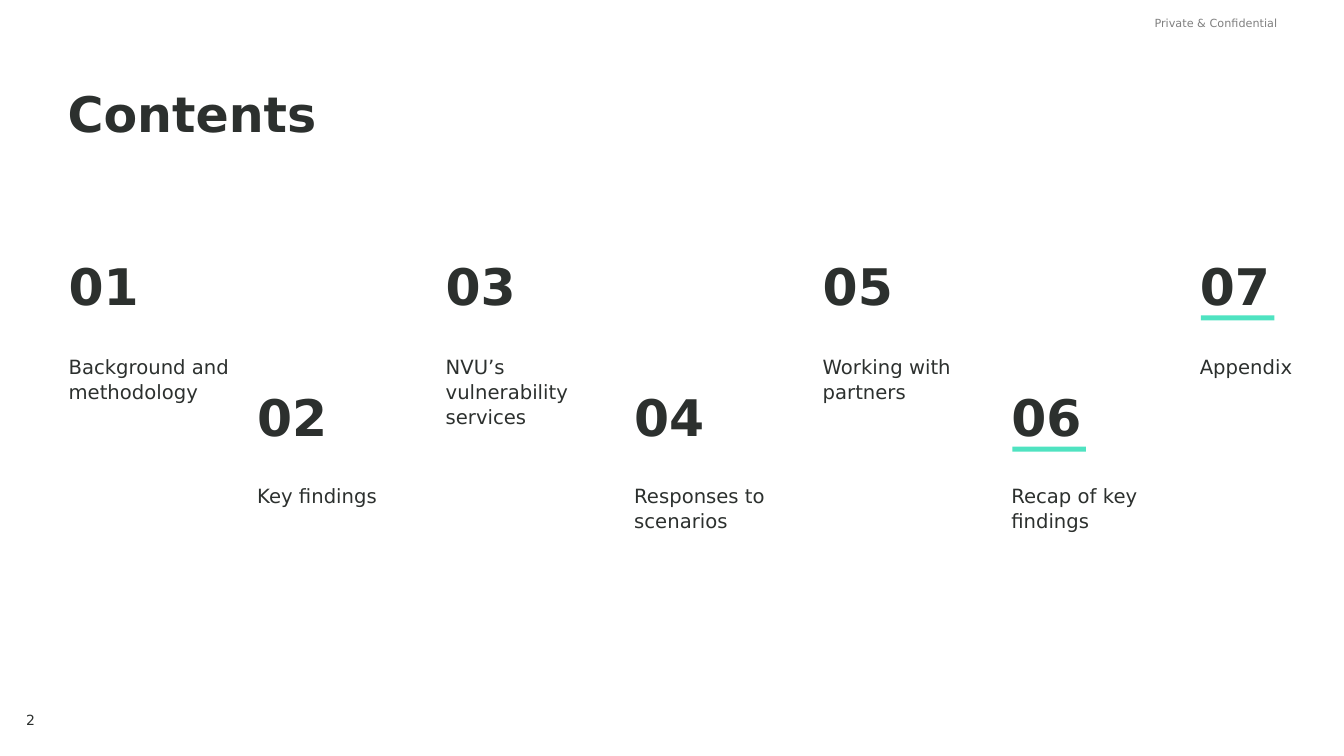
from pptx import Presentation
from pptx import util as u
from pptx.dml.color import RGBColor
from pptx.enum import shapes, text

INK = RGBColor(0x2C, 0x30, 0x2E)
GREY = RGBColor(0x80, 0x80, 0x80)
MINT = RGBColor(0x4F, 0xE3, 0xC1)
FONT = "DejaVu Sans"
WIDE, HIGH = 13.33, 7.5
LEFT, PITCH, COL = 0.68, 1.87, 1.61
FOOT = 6.62
ROWS = [(2.27, 3.5), (3.57, 4.78)]
TOPICS = [
    "Background and methodology",
    "Key findings",
    "NVU’s vulnerability services",
    "Responses to scenarios",
    "Working with partners",
    "Recap of key findings",
    "Appendix",
]
MARKED = {6, 7}


def add_text(slide, box, words, size, color=INK, bold=False, low=False,
             right=False, line=None):
    frame = slide.shapes.add_textbox(*map(u.Inches, box)).text_frame
    frame.word_wrap = True
    frame.margin_left = frame.margin_right = 0
    frame.margin_top = frame.margin_bottom = 0
    frame.vertical_anchor = text.MSO_ANCHOR.BOTTOM if low else text.MSO_ANCHOR.TOP
    para = frame.paragraphs[0]
    para.text = words
    para.alignment = text.PP_ALIGN.RIGHT if right else text.PP_ALIGN.LEFT
    if line:
        para.line_spacing = line
    font = para.font
    font.name, font.size, font.bold = FONT, u.Pt(size), bold
    font.color.rgb = color
    return para


def add_bar(slide, box):
    bar = slide.shapes.add_shape(shapes.MSO_SHAPE.RECTANGLE, *map(u.Inches, box))
    bar.shadow.inherit = False
    bar.fill.solid()
    bar.fill.fore_color.rgb = MINT
    bar.line.fill.background()


def add_frame(slide):
    add_text(slide, (0.67, 0.39, 12, 1.03), "Contents", 35, bold=True,
             low=True, line=0.9)
    add_text(slide, (11.3, 0.16, 1.37, 0.23), "Private & Confidential", 8,
             GREY, right=True)
    add_text(slide, (0.26, 7.06, 0.41, 0.23), "2", 10)


def add_topic(slide, left, row, number, topic):
    top, body = ROWS[row]
    width = min(COL, WIDE - left)
    head = add_text(slide, (left, top, width, 0.86), f"{number:02d}", 36,
                    bold=True, low=True)
    label = add_text(slide, (left, body, width, FOOT - body), topic, 14,
                     line=u.Pt(18))
    head.space_after = label.space_after = u.Pt(5)
    if number in MARKED:
        add_bar(slide, (left + 0.01, top + 0.86, 0.73, 0.05))


def main():
    deck = Presentation()
    deck.slide_width, deck.slide_height = u.Inches(WIDE), u.Inches(HIGH)
    slide = deck.slides.add_slide(deck.slide_layouts[6])
    add_frame(slide)
    for step, topic in enumerate(TOPICS):
        add_topic(slide, LEFT + step * PITCH, step % 2, step + 1, topic)
    deck.save("out.pptx")


if __name__ == "__main__":
    main()
